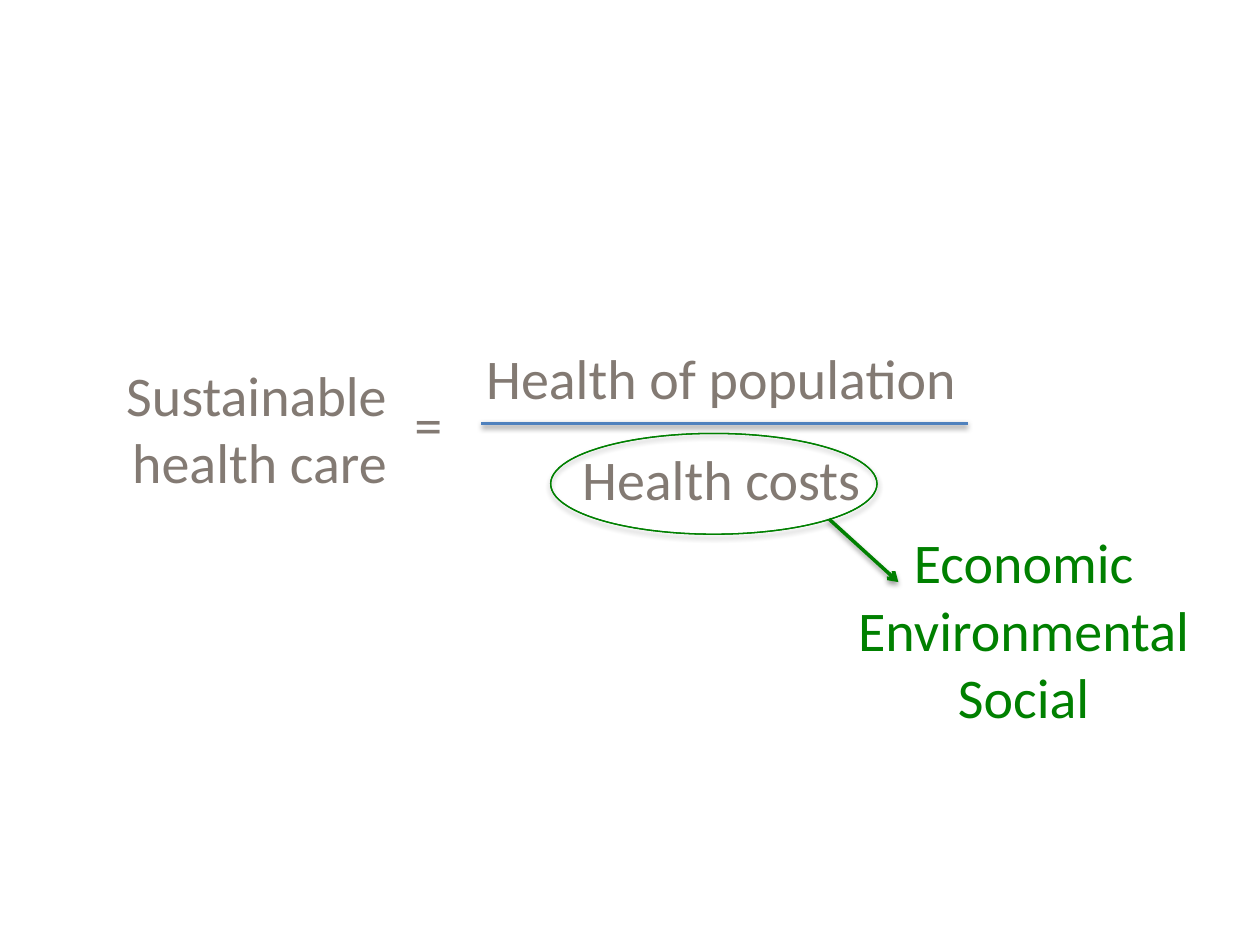
from lxml import etree
from pptx import Presentation
from pptx import util as u
from pptx.dml.color import RGBColor
from pptx.enum import shapes, text
from pptx.oxml import ns

WIDTH, HEIGHT = 10, 7.5
GREY = RGBColor(0x83, 0x7A, 0x73)
GREEN = RGBColor(0x00, 0x80, 0x00)
BLUE = RGBColor(0x4F, 0x81, 0xBD)
RING_BLUE = RGBColor(0x3D, 0x7C, 0xC7)


def add_child(parent, tag, **attributes):
    return etree.SubElement(parent, ns.qn(tag), attributes)


def add_shadow(shape, distance, opacity):
    """Cast a soft black shadow straight down; distance in points."""
    effects = add_child(shape._element.spPr, "a:effectLst")
    shadow = add_child(effects, "a:outerShdw", blurRad=str(u.Pt(3.1)),
                       dist=str(u.Pt(distance)), dir="5400000", rotWithShape="0")
    black = add_child(shadow, "a:srgbClr", val="000000")
    add_child(black, "a:alpha", val=str(opacity * 1000))


def add_text(slide, place, lines, color, align, spacing=None, wrap=False):
    box = slide.shapes.add_textbox(*map(u.Inches, place))
    frame = box.text_frame
    frame.word_wrap = wrap
    frame.auto_size = text.MSO_AUTO_SIZE.SHAPE_TO_FIT_TEXT
    frame.text = "\n".join(lines)
    for para in frame.paragraphs:
        para.alignment = align
        para.line_spacing = spacing
        para.font.name = "Calibri"
        para.font.size = u.Pt(32)
        para.font.color.rgb = color


def add_line(slide, start, end, color, arrow=False):
    line = slide.shapes.add_connector(
        shapes.MSO_CONNECTOR.STRAIGHT, *map(u.Inches, start + end))
    line.line.color.rgb = color
    line.line.width = u.Pt(2)
    if arrow:
        add_child(line.line._get_or_add_ln(), "a:tailEnd", type="arrow")
    add_shadow(line, 1.6, 38)


def add_ring(slide, place):
    ring = slide.shapes.add_shape(
        shapes.MSO_SHAPE.DONUT, *map(u.Inches, place))
    ring.adjustments[0] = 0
    ring.fill.solid()
    ring.fill.fore_color.rgb = RING_BLUE
    ring.line.color.rgb = GREEN
    ring.line.width = u.Pt(0.75)
    add_shadow(ring, 1.8, 35)


def main():
    deck = Presentation()
    deck.slide_width, deck.slide_height = u.Inches(WIDTH), u.Inches(HEIGHT)
    slide = deck.slides.add_slide(deck.slide_layouts[6])
    align = text.PP_ALIGN

    # Left side of the equation
    add_text(slide, (-0.03, 2.81, 3.2, 1.18), ["Sustainable", "health care"],
             GREY, align.RIGHT, wrap=True)

    # Fraction with its bar, and the ring around the costs
    add_text(slide, (3.74, 2.41, 3.97, 1.67),
             ["Health of population", "Health costs"],
             GREY, align.CENTER, spacing=1.5)
    add_line(slide, (3.82, 3.36), (7.68, 3.36), BLUE)
    add_ring(slide, (4.37, 3.44, 2.59, 0.8))

    # Kinds of cost
    add_text(slide, (6.65, 4.14, 2.95, 1.72),
             ["Economic", "Environmental", "Social"], GREEN, align.CENTER)
    add_line(slide, (6.58, 4.12), (7.13, 4.62), GREEN, arrow=True)

    # Equals sign
    add_text(slide, (3.19, 3.04, 0.43, 0.64), ["="], GREY, align.LEFT)

    deck.save("out.pptx")


if __name__ == "__main__":
    main()
